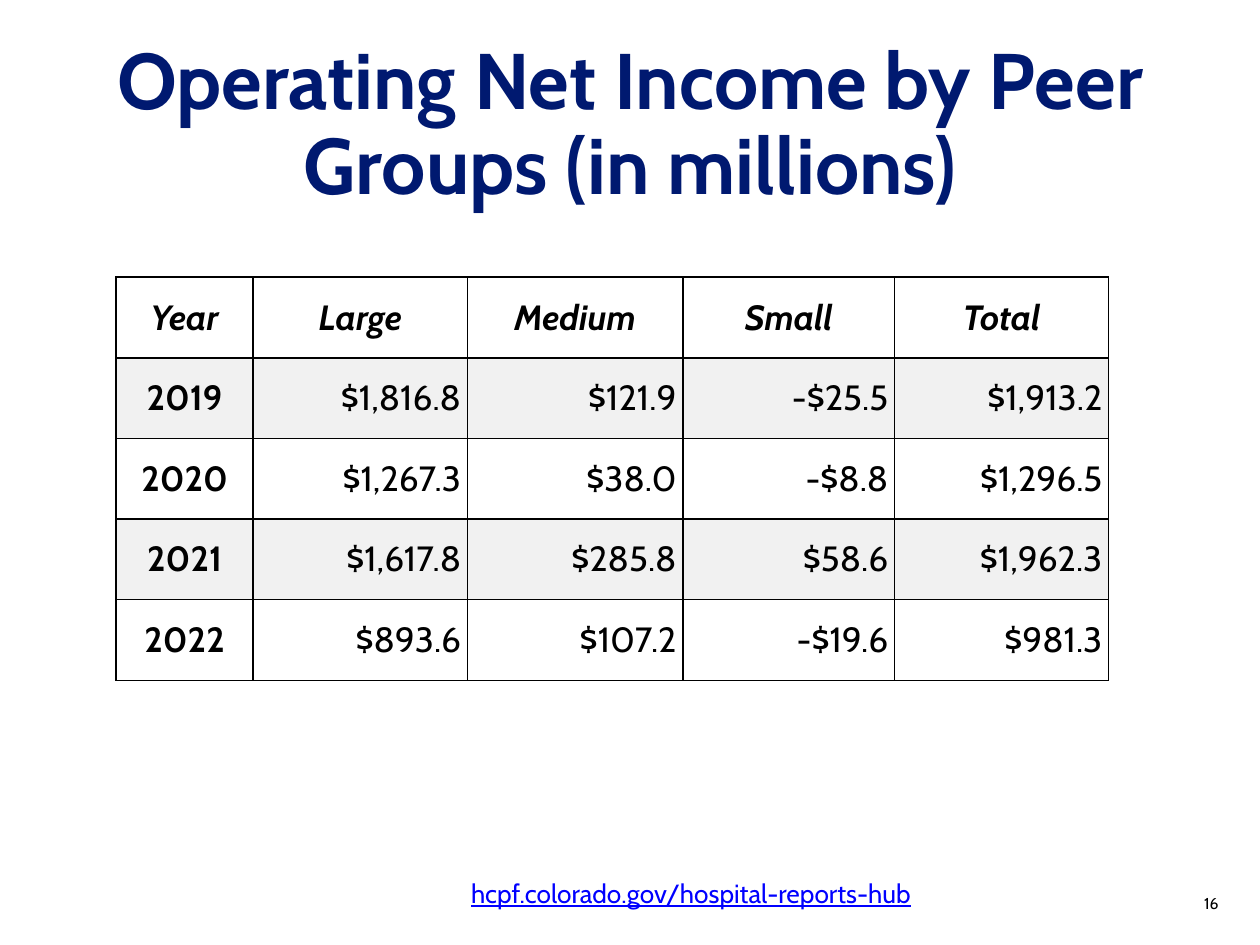
from dataclasses import dataclass

from lxml.etree import SubElement
from pptx import Presentation
from pptx.dml.color import RGBColor
from pptx.enum.text import MSO_ANCHOR as Anchor, PP_ALIGN as Align
from pptx.oxml.ns import qn
from pptx.util import Inches, Pt


@dataclass(frozen=True)
class Theme:
    font: str = "Cabin"
    title: str = "001970"
    ink: str = "000000"
    link: str = "0000FF"
    band: str = "F1F1F1"
    title_size: float = 45
    table_size: float = 20
    link_size: float = 15
    number_size: float = 9
    border_width: float = 1


@dataclass(frozen=True)
class Label:
    text: str
    box: tuple[float, float, float, float]
    size: float
    color: str
    align: Align = Align.LEFT
    anchor: Anchor = Anchor.MIDDLE
    line_spacing: float = 1.0
    margin_y: float = 0.05
    bold: bool = False
    underline: bool = False


THEME = Theme()

LABELS = [
    Label("Operating Net Income by Peer Groups (in millions)", (0.69, 0.48, 8.62, 1.05),
          THEME.title_size, THEME.title, Align.CENTER, line_spacing=0.9, bold=True),
    Label("16", (7.52, 6.97, 2.25, 0.4), THEME.number_size, THEME.ink, Align.RIGHT),
    Label("hcpf.colorado.gov/hospital-reports-hub", (3.64, 6.89, 5.61, 0.4),
          THEME.link_size, THEME.link, anchor=Anchor.TOP, line_spacing=0.9,
          margin_y=0.1, underline=True),
]

INCOME_ROWS = [
    ("Year", "Large", "Medium", "Small", "Total"),
    ("2019", "$1,816.8", "$121.9", "-$25.5", "$1,913.2"),
    ("2020", "$1,267.3", "$38.0", "-$8.8", "$1,296.5"),
    ("2021", "$1,617.8", "$285.8", "$58.6", "$1,962.3"),
    ("2022", "$893.6", "$107.2", "-$19.6", "$981.3"),
]
COLUMN_WIDTHS = (1.09, 1.7, 1.71, 1.68, 1.7)
ROW_HEIGHT = 0.64
TABLE_LEFT, TABLE_TOP = 0.92, 2.2
CELL_MARGIN = 0.05


def style_font(font, size: float, color: str, bold: bool = False) -> None:
    font.name = THEME.font
    font.size = Pt(size)
    font.bold = bold
    font.color.rgb = RGBColor.from_string(color)


def add_label(slide, label: Label) -> None:
    tf = slide.shapes.add_textbox(*map(Inches, label.box)).text_frame
    tf.word_wrap = True
    tf.vertical_anchor = label.anchor
    tf.margin_left = tf.margin_right = Inches(0.1)
    tf.margin_top = tf.margin_bottom = Inches(label.margin_y)
    p = tf.paragraphs[0]
    p.text = label.text
    p.alignment = label.align
    p.line_spacing = label.line_spacing
    style_font(p.font, label.size, label.color, label.bold)
    p.font.underline = label.underline


def add_borders(cell) -> None:
    """Outline all four sides; call before the fill is set, which must follow."""
    tc_pr = cell._tc.get_or_add_tcPr()
    for side in ("a:lnL", "a:lnR", "a:lnT", "a:lnB"):
        line = SubElement(tc_pr, qn(side), w=str(Pt(THEME.border_width)))
        fill = SubElement(line, qn("a:solidFill"))
        SubElement(fill, qn("a:srgbClr"), val=THEME.ink)


def fill_cell(cell, text: str, row: int, col: int) -> None:
    is_header, is_year = row == 0, col == 0
    cell.vertical_anchor = Anchor.MIDDLE
    cell.margin_left = cell.margin_right = Inches(CELL_MARGIN)
    cell.margin_top = cell.margin_bottom = Inches(CELL_MARGIN)
    add_borders(cell)
    if row % 2:
        cell.fill.solid()
        cell.fill.fore_color.rgb = RGBColor.from_string(THEME.band)
    else:
        cell.fill.background()
    p = cell.text_frame.paragraphs[0]
    p.text = text
    p.alignment = Align.CENTER if is_header or is_year else Align.RIGHT
    style_font(p.font, THEME.table_size, THEME.ink, is_header or is_year)
    p.font.italic = is_header


def add_income_table(slide) -> None:
    table = slide.shapes.add_table(
        len(INCOME_ROWS), len(COLUMN_WIDTHS), Inches(TABLE_LEFT), Inches(TABLE_TOP),
        Inches(sum(COLUMN_WIDTHS)), Inches(ROW_HEIGHT * len(INCOME_ROWS))).table
    table.first_row = table.horz_banding = False
    for column, width in zip(table.columns, COLUMN_WIDTHS):
        column.width = Inches(width)
    for r, values in enumerate(INCOME_ROWS):
        table.rows[r].height = Inches(ROW_HEIGHT)
        for c, text in enumerate(values):
            fill_cell(table.cell(r, c), text, r, c)


def main() -> None:
    prs = Presentation()
    prs.slide_width, prs.slide_height = Inches(10), Inches(7.5)
    s = prs.slides.add_slide(prs.slide_layouts[6])
    for label in LABELS:
        add_label(s, label)
    add_income_table(s)
    prs.save("out.pptx")


if __name__ == "__main__":
    main()
